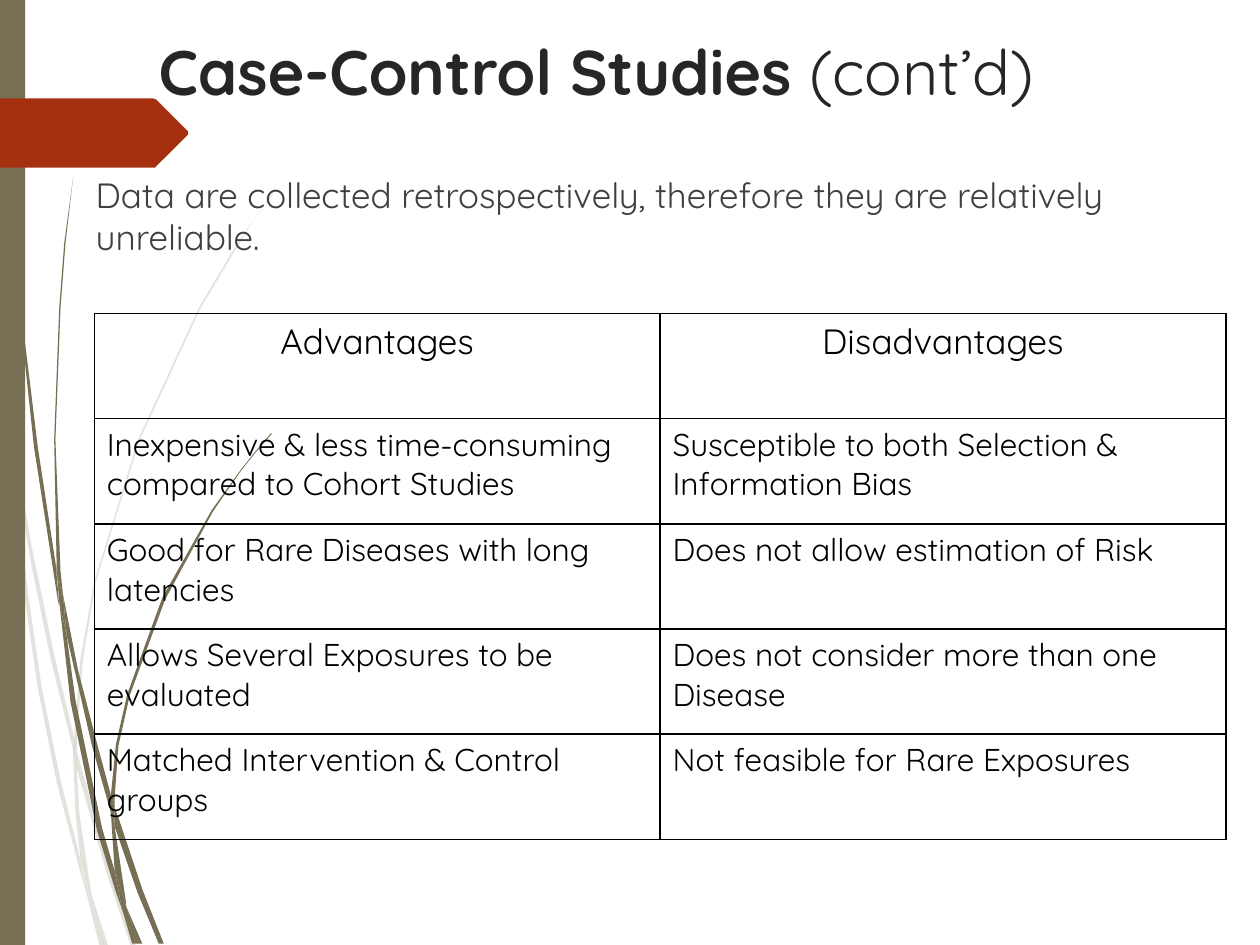
import pptx
import pptx.util
import pptx.dml.color
import pptx.enum.shapes
import pptx.enum.text
import pptx.oxml
import pptx.oxml.ns
from pptx.util import Cm

RGBColor = pptx.dml.color.RGBColor
OLIVE = RGBColor(0x76, 0x6F, 0x54)
RUST = RGBColor(0xA5, 0x30, 0x10)
INK = RGBColor(0x26, 0x26, 0x26)
GREY = RGBColor(0x40, 0x40, 0x40)
BLACK = RGBColor(0, 0, 0)
FONT = "Quicksand"
UNIT = Cm(0.0254)

PALE = [
    [(8, 350), (6, 322), (0, 282), (0, 299), (7, 344)],
    [(40, 522), (59, 599), (59, 586), (43, 520), (25, 433), (10, 345),
     (12, 376), (25, 449)],
    [(64, 607), (61, 596), (61, 610), (85, 694), (104, 751), (108, 751),
     (88, 692)],
    [(83, 751), (86, 751), (73, 711)],
    [(64, 683), (48, 619), (33, 545), (22, 469), (16.6, 422), (12, 376),
     (8, 350), (12, 410), (19, 470), (30.5, 546), (45, 621), (64, 693),
     (70, 714), (69, 707)],
    [(58, 599), (60, 646), (64, 683), (67, 692), (73, 711), (72, 706),
     (63, 646), (61, 610), (61, 608)],
    [(61, 584), (66, 522), (76, 462), (111, 349), (159, 245), (187, 198),
     (201, 175), (217, 154), (217, 153), (201, 175), (186, 197), (158, 244),
     (110, 348), (75, 461), (64, 522), (59, 584), (59, 586), (61, 596)],
    [(70, 714), (79, 751), (82, 751)],
    [(61, 608), (61, 610), (61, 596), (59, 586), (58, 599)],
    [(67, 692), (65, 683), (69, 707), (70, 714), (82, 751), (83, 751),
     (73, 711)],
]
DARK = [
    [(5, 110), (14, 233), (27, 355), (46, 477), (47, 481), (45, 457),
     (45, 453), (30, 355), (15, 232), (6, 109), (4, 48), (3, 0), (2, 0),
     (3, 48)],
    [(73, 592), (88, 645), (88, 633), (88, 631), (77, 590), (62, 532),
     (50, 472), (53, 505)],
    [(94, 649), (91, 641), (91, 656), (109, 708), (126, 749), (130, 749),
     (113, 706)],
    [(91, 691), (81, 657), (60, 556), (53, 505), (47, 477), (56, 557),
     (77, 659), (92, 708), (97, 722), (96, 717)],
    [(50, 472), (48, 453), (44, 349), (48, 245), (52, 193), (58, 141),
     (51, 193), (47, 245), (43, 349), (45, 449), (49, 472)],
    [(110, 749), (113, 749), (100, 719)],
    [(47, 477), (53, 505), (50, 472), (49, 472), (45, 449), (45, 453)],
    [(91, 633), (94, 592), (103, 552), (131, 476), (169, 406), (191, 374),
     (203, 359), (216, 344), (215, 344), (203, 358), (191, 373), (168, 405),
     (129, 474), (101, 551), (92, 591), (88, 631), (91, 641)],
    [(97, 722), (105, 749), (108, 749)],
    [(88, 645), (91, 691), (96, 706), (100, 719), (100, 716), (91, 656),
     (90, 651)],
    [(88, 645), (90, 651), (91, 656), (91, 641), (88, 631), (88, 633)],
    [(96, 706), (91, 691), (96, 717), (97, 722), (108, 749), (110, 749),
     (100, 719)],
]
ARROW = [(149, 107), (124, 132), (123, 133), (0, 133), (0, 78), (121, 78),
         (124, 79), (149, 104)]
ROWS = [
    ("Advantages", "Disadvantages"),
    ("Inexpensive & less time-consuming compared to Cohort Studies",
     "Susceptible to both Selection & Information Bias"),
    ("Good for Rare Diseases with long latencies",
     "Does not allow estimation of Risk"),
    ("Allows Several Exposures to be evaluated",
     "Does not consider more than one Disease"),
    ("Matched Intervention & Control groups",
     "Not feasible for Rare Exposures"),
]


def add(parent, tag, **attrs):
    """Append a DrawingML child with attributes and return it."""
    node = pptx.oxml.parse_xml(f"<a:{tag} {pptx.oxml.ns.nsdecls('a')}/>")
    for key, value in attrs.items():
        node.set(key, str(value))
    parent.append(node)
    return node


def write(para, text, size=18, color=BLACK, bold=False, align=None):
    """Add one formatted run to a paragraph."""
    run = para.add_run()
    run.text = text
    run.font.name = FONT
    run.font.size = pptx.util.Pt(size)
    run.font.bold = bold
    run.font.color.rgb = color
    if align is not None:
        para.alignment = align


def paint(shape, color, alpha=100):
    """Give a shape a flat fill with no line or shadow."""
    shape.shadow.inherit = False
    shape.fill.solid()
    shape.fill.fore_color.rgb = color
    shape.line.fill.background()
    if alpha < 100:
        tint = shape.fill._xPr.find(".//" + pptx.oxml.ns.qn("a:srgbClr"))
        add(tint, "alpha", val=alpha * 1000)


def draw(slide, left, top, parts, color, alpha=100):
    """Draw closed outlines measured from the corner of a box."""
    for start, *rest in parts:
        path = slide.shapes.build_freeform(*start, scale=UNIT)
        path.add_line_segments(rest)
        paint(path.convert_to_shape(left, top), color, alpha)


def decor(slide, left, top, width, height):
    """Place the grass, the side bar and the arrow."""
    draw(slide, left, top, PALE, OLIVE, alpha=20)
    draw(slide, left, top, DARK, OLIVE)
    kind = pptx.enum.shapes.MSO_SHAPE.RECTANGLE
    paint(slide.shapes.add_shape(kind, left, top, width, height), OLIVE)
    draw(slide, left, top, [ARROW], RUST)


def block(slide, left, top, width, height):
    """Add a wrapping text box and return its first paragraph."""
    frame = slide.shapes.add_textbox(left, top, width, height).text_frame
    frame.word_wrap = True
    return frame.paragraphs[0]


def title(slide, *box):
    """Place the heading."""
    para = block(slide, *box)
    write(para, "Case-Control Studies ", size=36, color=INK, bold=True)
    write(para, "(cont’d)", size=36, color=INK)


def intro(slide, *box):
    """Place the sentence above the table."""
    para = block(slide, *box)
    para.space_before = pptx.util.Pt(10)
    para._p.get_or_add_pPr().set("marL", str(Cm(0.18)))
    write(para, "Data are collected retrospectively, therefore they are "
          "relatively unreliable.", size=20, color=GREY)


def edge(cell):
    """Rule all four sides of a cell and leave it unfilled."""
    props = cell._tc.get_or_add_tcPr()
    for side in ("lnL", "lnR", "lnT", "lnB"):
        line = add(props, side, w=pptx.util.Pt(1))
        add(add(line, "solidFill"), "srgbClr", val=BLACK)
    cell.fill.background()


def grid(slide, left, top, width, height):
    """Place the table of advantages and disadvantages."""
    table = slide.shapes.add_table(
        len(ROWS), len(ROWS[0]), left, top, width, height).table
    table.first_row = table.horz_banding = False
    for i, row in enumerate(ROWS):
        look = {} if i else {
            "size": 20, "align": pptx.enum.text.PP_ALIGN.CENTER}
        for j, text in enumerate(row):
            cell = table.cell(i, j)
            edge(cell)
            write(cell.text_frame.paragraphs[0], text, **look)


def main():
    """Build and save the slide."""
    deck = pptx.Presentation()
    deck.slide_width, deck.slide_height = Cm(25.4), Cm(19.05)
    slide = deck.slides.add_slide(deck.slide_layouts[6])
    decor(slide, 0, 0, Cm(0.51), deck.slide_height)
    title(slide, Cm(2.95), Cm(0.53), Cm(19.51), Cm(1.88))
    intro(slide, Cm(1.5), Cm(3.38), Cm(22.4), Cm(2.34))
    grid(slide, Cm(1.9), Cm(6.32), Cm(22.81), Cm(10.6))
    deck.save("out.pptx")


if __name__ == "__main__":
    main()
